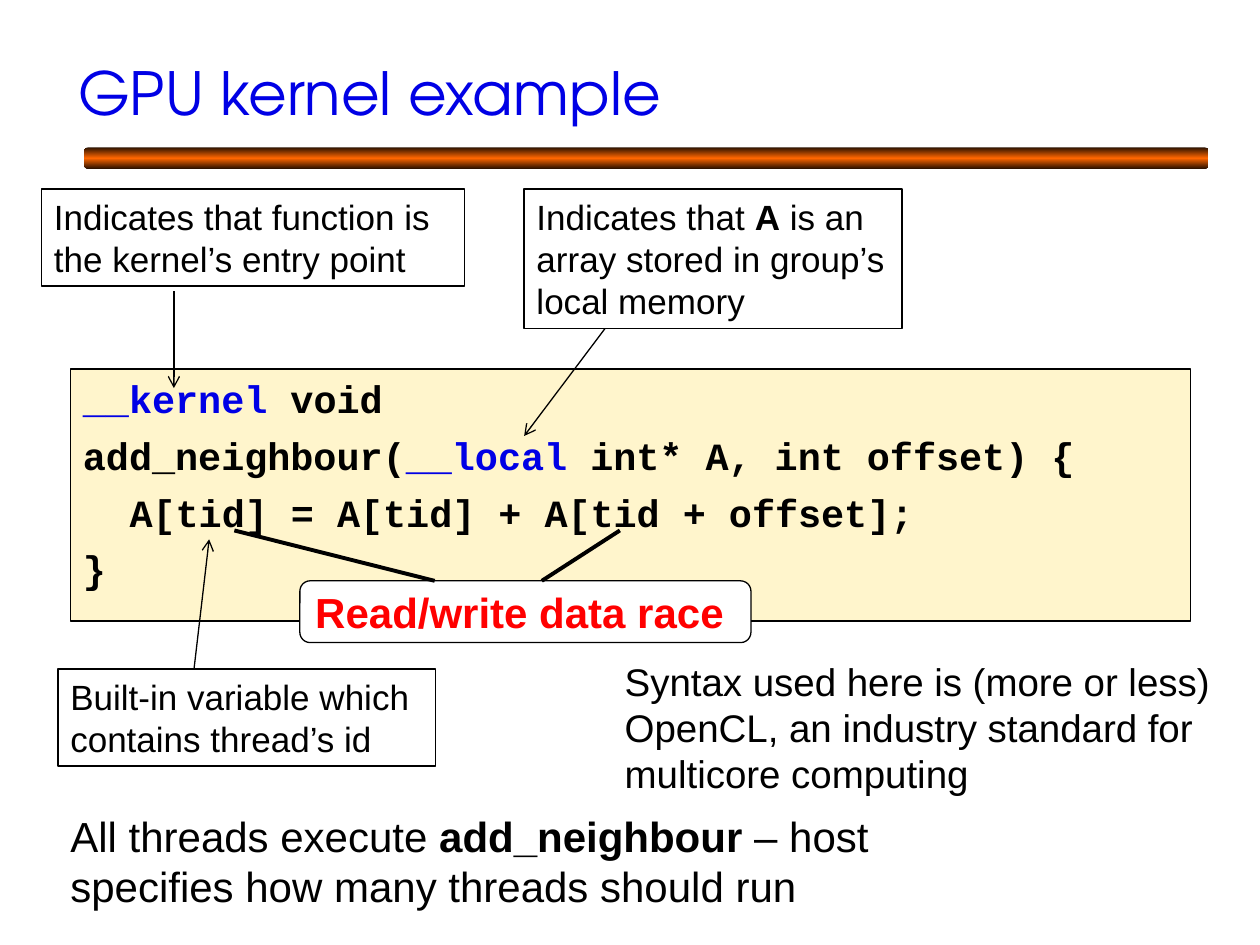
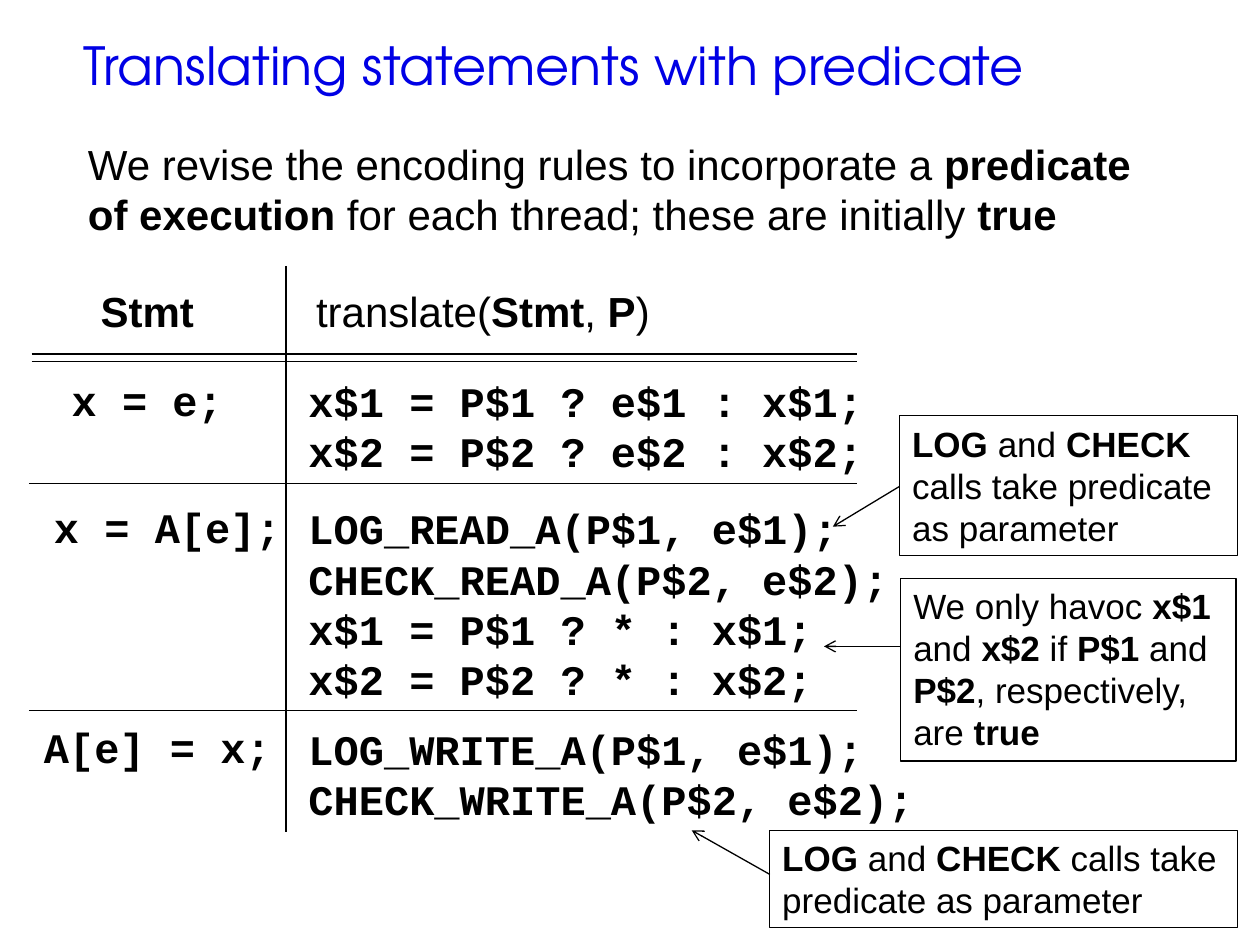
from copy import deepcopy
from dataclasses import dataclass

from pptx import Presentation
from pptx.dml.color import RGBColor as RGB
from pptx.enum.shapes import MSO_CONNECTOR, MSO_SHAPE as SHAPE
from pptx.enum.text import MSO_ANCHOR, MSO_AUTO_SIZE, PP_ALIGN
from pptx.oxml.ns import qn
from pptx.util import Inches, Pt


@dataclass(frozen=True)
class Theme:
    ink: RGB = RGB(0x00, 0x00, 0x00)
    blue: RGB = RGB(0x00, 0x00, 0xE5)
    red: RGB = RGB(0xFF, 0x00, 0x00)
    white: RGB = RGB(0xFF, 0xFF, 0xFF)
    cream: RGB = RGB(0xFF, 0xF5, 0xCC)
    orange: RGB = RGB(0xFF, 0x66, 0x00)
    brown: RGB = RGB(0x2A, 0x11, 0x00)
    title_font: str = "TeX Gyre Adventor"
    text_font: str = "Arial"
    code_font: str = "Courier New"
    large: int = 24
    medium: int = 22
    note: int = 20
    thin: float = 0.75
    thick: float = 2.25


theme = Theme()


def add_text(slide, text, box, *, shape=None, font=theme.text_font, size=theme.large,
             color=theme.ink, bold=False, accent=None, fill=None, outlined=False,
             anchor=MSO_ANCHOR.TOP, space_before=0):
    """Write text in a box; pieces between ** are bold, in the accent colour if given."""
    left, top, width, height = map(Inches, box)
    if shape is None:
        shape = slide.shapes.add_textbox(left, top, width, height)
    shape.left, shape.top, shape.width, shape.height = left, top, width, height
    if fill is not None:
        shape.fill.solid()
        shape.fill.fore_color.rgb = fill
    if outlined:
        shape.line.color.rgb = theme.ink
        shape.line.width = Pt(theme.thin)
    frame = shape.text_frame
    frame.word_wrap = True
    frame.auto_size = MSO_AUTO_SIZE.NONE
    frame.vertical_anchor = anchor
    for index, line in enumerate(text.split("\n")):
        paragraph = frame.add_paragraph() if index else frame.paragraphs[0]
        paragraph.alignment = PP_ALIGN.LEFT
        paragraph.space_before = Pt(space_before)
        for position, piece in enumerate(line.split("**")):
            if not piece:
                continue
            marked = position % 2 == 1
            run = paragraph.add_run()
            run.text = piece
            run.font.name = font
            run.font.size = Pt(size)
            run.font.bold = bold or marked
            run.font.color.rgb = accent if marked and accent is not None else color
    return shape


def add_line(slide, start, end, *, width=theme.thin, arrow=False):
    """Draw a straight line, with an open arrowhead at its end if asked."""
    connector = slide.shapes.add_connector(
        MSO_CONNECTOR.STRAIGHT, *map(Inches, start + end))
    connector.line.color.rgb = theme.ink
    connector.line.width = Pt(width)
    properties = connector._element.spPr
    if arrow:
        outline = connector.line._get_or_add_ln()
        outline.append(outline.makeelement(qn("a:tailEnd"), {"type": "arrow"}))
    properties.append(properties.makeelement(qn("a:effectLst"), {}))


presentation = Presentation()
presentation.slide_width, presentation.slide_height = Inches(10), Inches(7.5)

# Slides with their titles
slides = []
for title, box, size in [
    ("GPU kernel example", (0.52, 0.22, 9.19, 1.02), 34),
    ("Translating statements with predicate", (0.56, 0.01, 9.08, 1), 30),
]:
    slide = presentation.slides.add_slide(presentation.slide_layouts[5])
    add_text(slide, title, box, shape=slide.shapes.title, font=theme.title_font,
             size=size, color=theme.blue, anchor=MSO_ANCHOR.MIDDLE)
    slides.append(slide)
kernel_slide, predicate_slide = slides

# Kernel slide: gradient bar under the title
bar = kernel_slide.shapes.add_shape(
    SHAPE.ROUNDED_RECTANGLE, Inches(0.67), Inches(1.17), Inches(8.92), Inches(0.17))
bar.shadow.inherit = False
bar.line.fill.background()
bar.fill.gradient()
bar.fill.gradient_angle = 90
stop_list = bar._element.spPr.find(qn("a:gradFill")).find(qn("a:gsLst"))
stop_list.append(deepcopy(stop_list[0]))
for stop, position, color in zip(bar.fill.gradient_stops, (0, 0.5, 1),
                                 (theme.brown, theme.orange, theme.brown)):
    stop.position = position
    stop.color.rgb = color

# Kernel slide: code panel
code = "\n".join([
    "**__kernel** void",
    "add_neighbour(**__local** int* A, int offset) {",
    "A[tid] = A[tid] + A[tid + offset];",
    "}",
])
panel = add_text(kernel_slide, code, (0.56, 2.93, 8.89, 2), font=theme.code_font,
                 size=theme.medium, bold=True, accent=theme.blue, fill=theme.cream,
                 outlined=True, space_before=6)
statement = panel.text_frame.paragraphs[2]
statement._p.get_or_add_pPr().set("marL", str(Inches(0.37)))

# Kernel slide: data race label and its two pointers
race_box = (2.38, 4.61, 3.58, 0.49)
race_label = kernel_slide.shapes.add_shape(
    SHAPE.ROUNDED_RECTANGLE, *map(Inches, race_box))
race_label.shadow.inherit = False
add_text(kernel_slide, "Read/write data race", race_box, shape=race_label,
         color=theme.red, bold=True, fill=theme.white, outlined=True,
         anchor=MSO_ANCHOR.MIDDLE)
for start, end in [((3.45, 4.61), (1.86, 4.21)), ((4.3, 4.61), (4.92, 4.21))]:
    add_line(kernel_slide, start, end, width=theme.thick)

# Kernel slide: remarks
add_text(kernel_slide, "All threads execute **add_neighbour** – host specifies "
         "how many threads should run", (0.46, 6.38, 6.71, 0.91))
add_text(kernel_slide, "Syntax used here is (more or less) OpenCL, an industry "
         "standard for multicore computing", (4.86, 5.17, 4.89, 1.21),
         size=theme.medium)

# Predicate slide: introduction
add_text(predicate_slide, "We revise the encoding rules to incorporate a **predicate "
         "of execution** for each thread; these are initially **true**",
         (0.6, 1.05, 8.76, 0.91))

# Predicate slide: column headings and rules
add_text(predicate_slide, "**Stmt**", (0.7, 2.22, 1.1, 0.5))
add_text(predicate_slide, "translate(**Stmt**, **P**)", (2.41, 2.22, 2.88, 0.5))
add_line(predicate_slide, (2.27, 2.11), (2.27, 6.6))
for left, top in [(0.25, 2.81), (0.25, 2.87), (0.23, 3.84), (0.23, 5.64)]:
    add_line(predicate_slide, (left, top), (6.8, top))

# Predicate slide: each statement beside its translation
for left, top, width, source, translation in [
    (0.47, 2.92, 1.6, "x = e;", ["x$1 = P$1 ? e$1 : x$1;", "x$2 = P$2 ? e$2 : x$2;"]),
    (0.33, 3.93, 2.15, "x = A[e];", ["LOG_READ_A(P$1, e$1);", "CHECK_READ_A(P$2, e$2);",
                                     "x$1 = P$1 ? * : x$1;", "x$2 = P$2 ? * : x$2;"]),
    (0.25, 5.68, 2.65, "A[e] = x;", ["LOG_WRITE_A(P$1, e$1);", "CHECK_WRITE_A(P$2, e$2);"]),
]:
    height = 0.1 + 0.4 * len(translation)
    add_text(predicate_slide, source, (left, top, width, 0.5),
             font=theme.code_font, bold=True)
    add_text(predicate_slide, "\n".join(translation), (2.35, top + 0.01, 5.5, height),
             font=theme.code_font, bold=True)

# Outlined notes, each with an arrow to what it explains
log_note = "**LOG** and **CHECK **calls take predicate as parameter"
for slide, text, box, start, end in [
    (kernel_slide, "Indicates that function is the kernel’s entry point",
     (0.33, 1.5, 3.36, 0.77), (1.38, 2.31), (1.38, 3.08)),
    (kernel_slide, "Indicates that **A** is an array stored in group’s local memory",
     (4.16, 1.5, 3, 1.11), (4.8, 2.61), (4.16, 3.46)),
    (kernel_slide, "Built-in variable which contains thread’s id",
     (0.46, 5.31, 3, 0.77), (1.54, 5.31), (1.66, 4.28)),
    (predicate_slide, log_note, (7.14, 3.3, 2.68, 1.11), (7.14, 3.86), (6.61, 4.18)),
    (predicate_slide, "We only havoc **x$1** and **x$2** if **P$1** and **P$2**, "
     "respectively, are **true**",
     (7.15, 4.59, 2.66, 1.45), (7.15, 5.13), (6.54, 5.13)),
    (predicate_slide, log_note, (6.11, 6.59, 3.71, 0.77), (6.11, 6.94), (5.49, 6.59)),
]:
    add_text(slide, text, box, size=theme.note, outlined=True)
    add_line(slide, start, end, arrow=True)

presentation.save("out.pptx")
